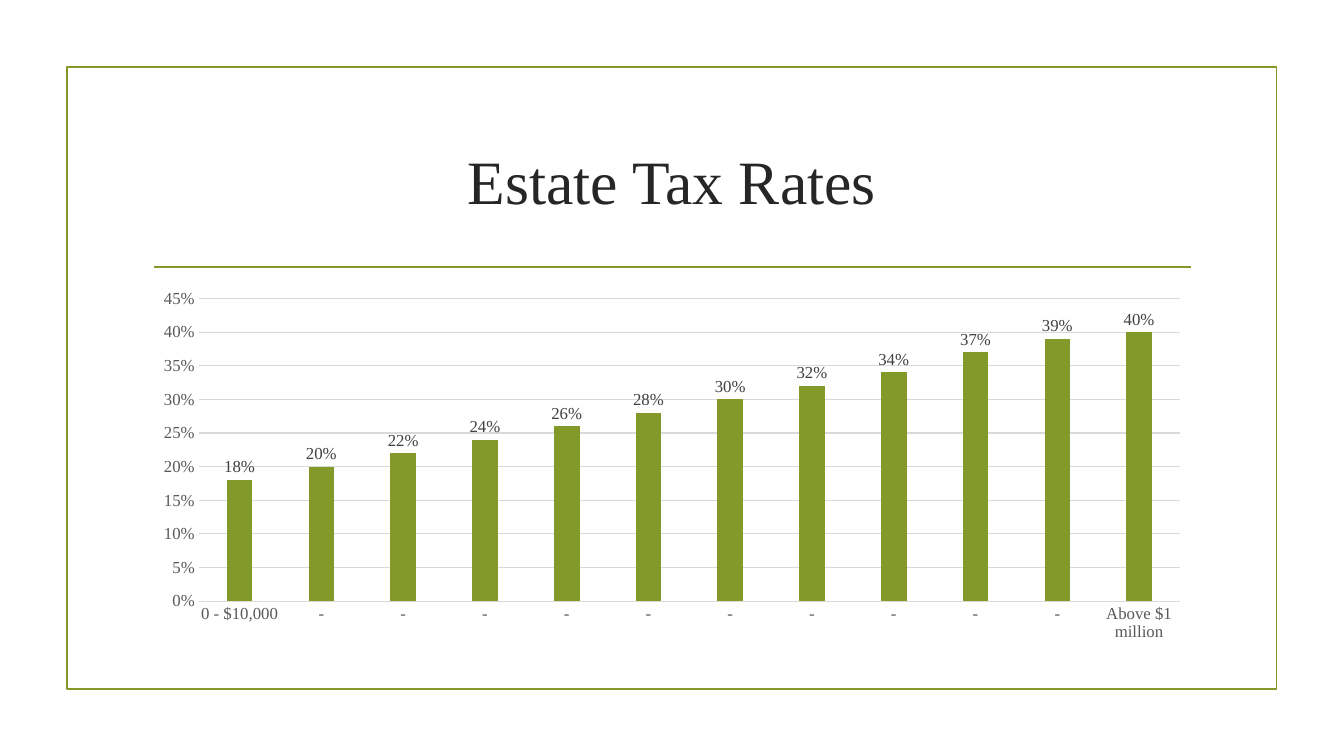
"""Build the estate tax rates slide."""
from typing import NamedTuple

from lxml.etree import SubElement
from pptx import Presentation
from pptx.chart.chart import Chart
from pptx.chart.data import CategoryChartData as Data
from pptx.dml.color import RGBColor
from pptx.dml.line import LineFormat as Line
from pptx.enum.chart import XL_CHART_TYPE as Kind
from pptx.enum.chart import XL_LABEL_POSITION as Spot
from pptx.enum.chart import XL_TICK_MARK as Tick
from pptx.enum.shapes import MSO_CONNECTOR as Link
from pptx.enum.shapes import MSO_SHAPE as Shape
from pptx.enum.text import MSO_ANCHOR as Anchor
from pptx.enum.text import PP_ALIGN as Align
from pptx.oxml.ns import qn
from pptx.slide import Slide
from pptx.text.text import Font
from pptx.util import Pt

GREEN = RGBColor(0x83, 0x99, 0x2A)
INK = RGBColor(0x26, 0x26, 0x26)
DARK = RGBColor(0x40, 0x40, 0x40)
GRAY = RGBColor(0x59, 0x59, 0x59)
PALE = RGBColor(0xD9, 0xD9, 0xD9)
BLACK = RGBColor(0, 0, 0)
WHITE = RGBColor(0xFF, 0xFF, 0xFF)
FACE = "Times New Roman"
RATES = (0.18, 0.2, 0.22, 0.24, 0.26, 0.28, 0.3, 0.32, 0.34, 0.37, 0.39, 0.4)
BANDS = ("0 - $10,000", *["-"] * (len(RATES) - 2), "Above $1 million")


class Box(NamedTuple):
    """Hold a left, top, width and height in points."""
    left: float
    top: float
    width: float
    height: float

    def place(self) -> tuple[Pt, ...]:
        """Give the four lengths for a new object."""
        return tuple(Pt(size) for size in self)


FRAME = Box(47.75, 48, 864, 444.25)
TITLE = Box(102, 77, 756, 103)
PLOT = Box(102, 201.6, 756, 261.4)


def set_font(font: Font, size: float, color: RGBColor) -> None:
    """Set the face, size and colour of a font."""
    font.name, font.size, font.bold = FACE, Pt(size), False
    font.color.rgb = color


def set_line(line: Line, color: RGBColor, width: float) -> None:
    """Set the colour and width of a line."""
    line.color.rgb = color
    line.width = Pt(width)


def add_frame(slide: Slide) -> None:
    """Draw the border and the rule below the title."""
    frame = slide.shapes.add_shape(Shape.RECTANGLE, *FRAME.place())
    frame.shadow.inherit = False
    frame.fill.background()
    set_line(frame.line, GREEN, 1.25)
    rule = slide.shapes.add_connector(
        Link.STRAIGHT, Pt(110), Pt(190.8), Pt(850.5), Pt(190.8))
    set_line(rule.line, GREEN, 1.25)
    SubElement(rule.element.spPr, qn("a:effectLst"))


def add_title(slide: Slide) -> None:
    """Write the centred title."""
    text = slide.shapes.add_textbox(*TITLE.place()).text_frame
    text.word_wrap = True
    text.vertical_anchor = Anchor.MIDDLE
    text.text = "Estate Tax Rates"
    para = text.paragraphs[0]
    para.alignment = Align.CENTER
    set_font(para.runs[0].font, 44, INK)


def style_axes(chart: Chart) -> None:
    """Style both axes and the grid."""
    for axis in (chart.category_axis, chart.value_axis):
        axis.major_tick_mark = axis.minor_tick_mark = Tick.NONE
        set_font(axis.tick_labels.font, 12, GRAY)
    set_line(chart.category_axis.format.line, PALE, 0.75)
    scale = chart.value_axis
    scale.minimum_scale, scale.maximum_scale = 0, 0.45
    scale.major_unit = 0.05
    scale.format.line.fill.background()
    set_line(scale.major_gridlines.format.line, PALE, 0.75)
    scale.tick_labels.number_format = "0%"
    scale.tick_labels.number_format_is_linked = False


def add_rates(slide: Slide) -> None:
    """Chart the tax rate of each band."""
    data = Data(number_format="0%")
    data.categories = BANDS
    data.add_series("Series 1", RATES)
    chart = slide.shapes.add_chart(
        Kind.COLUMN_CLUSTERED, *PLOT.place(), data).chart
    set_font(chart.font, 12, BLACK)
    chart.has_legend = chart.has_title = False
    style_axes(chart)
    plot = chart.plots[0]
    plot.vary_by_categories = False
    plot.gap_width, plot.overlap = 219, -27
    fill = plot.series[0].format.fill
    fill.solid()
    fill.fore_color.rgb = GREEN
    labels = plot.series[0].data_labels
    labels.show_value = True
    labels.position = Spot.OUTSIDE_END
    labels.number_format = "0%"
    labels.number_format_is_linked = False
    set_font(labels.font, 12, DARK)


def main() -> None:
    """Build and save the slide."""
    deck = Presentation()
    deck.slide_width, deck.slide_height = Pt(960), Pt(540)
    slide = deck.slides.add_slide(deck.slide_layouts[6])
    slide.background.fill.solid()
    slide.background.fill.fore_color.rgb = WHITE
    add_frame(slide)
    add_title(slide)
    add_rates(slide)
    deck.save("out.pptx")


if __name__ == "__main__":
    main()
